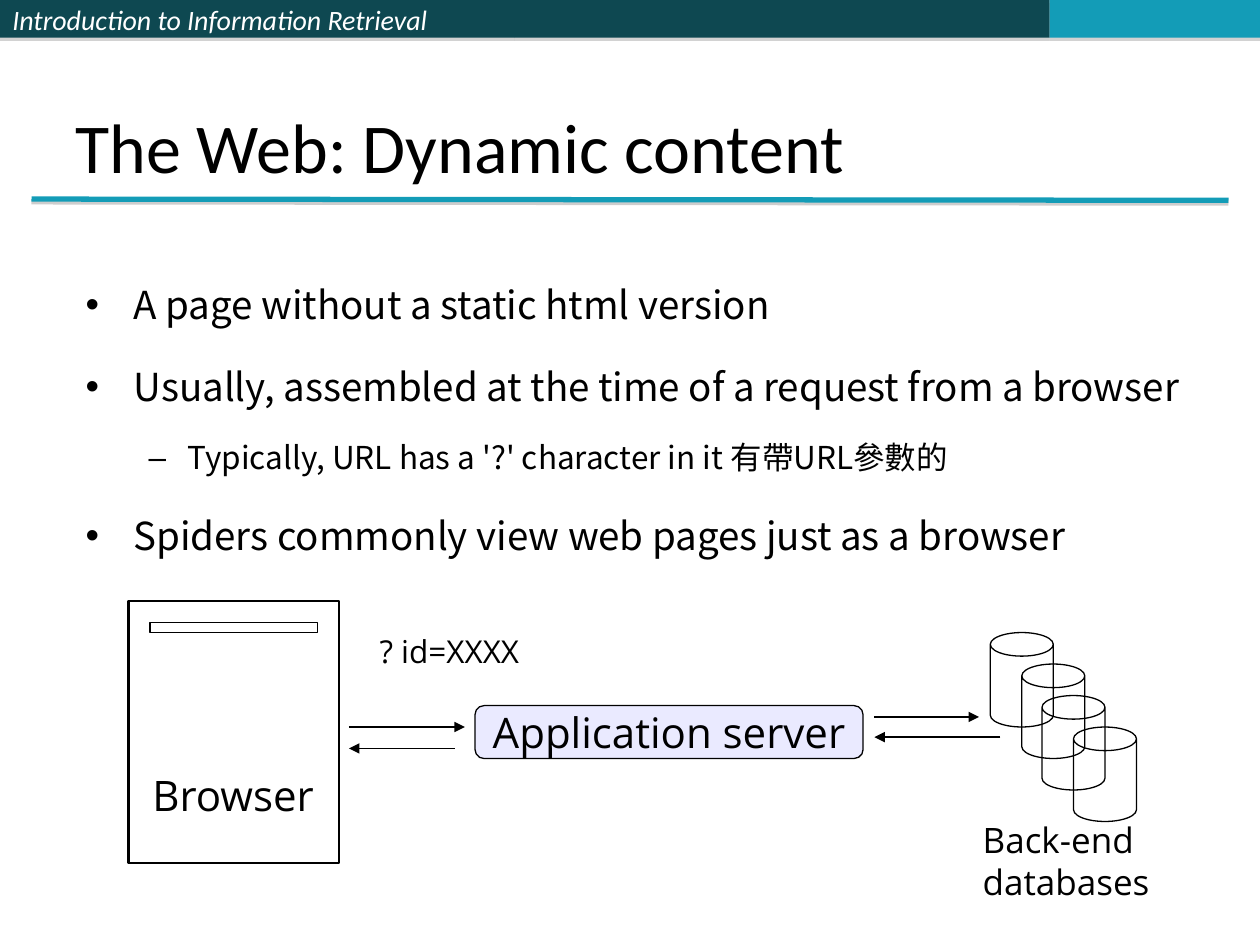
"""Build the slide on dynamic web content with its request diagram."""
from dataclasses import dataclass

from lxml.etree import SubElement
from pptx import Presentation
from pptx.dml.color import RGBColor
from pptx.enum.shapes import MSO_CONNECTOR, MSO_SHAPE
from pptx.enum.text import MSO_ANCHOR, MSO_AUTO_SIZE, PP_ALIGN
from pptx.oxml.ns import qn
from pptx.util import Inches, Pt


@dataclass(frozen=True)
class Theme:
    """Colours, fonts and type sizes."""
    dark: str = "0E4851"
    accent: str = "139CB7"
    server: str = "CCCCFF"
    shadow: str = "808080"
    ink: str = "000000"
    paper: str = "FFFFFF"
    heading_font: str = "Calibri"
    body_font: str = "Noto Sans CJK SC"
    label_font: str = "Open Sans"
    title_size: int = 40
    node_size: int = 24
    database_size: int = 20
    query_size: int = 18
    header_size: int = 16


THEME = Theme()
COURSE = "Introduction to Information Retrieval"
TITLE = "The Web: Dynamic content"
BULLETS = [
    (0, "A page without a static html version"),
    (0, "Usually, assembled at the time of a request from a browser"),
    (1, "Typically, URL has a '?' character in it 有帶URL參數的"),
    (0, "Spiders commonly view web pages just as a browser"),
]
LEVELS = [
    {"size": 22, "before": 7, "margin": 0.38, "indent": -0.38, "bullet": "•"},
    {"size": 18, "before": 6, "margin": 0.81, "indent": -0.31, "bullet": "–"},
]
HEADER = [(4.08, THEME.dark, COURSE), (4.25, THEME.dark, ""), (1.67, THEME.accent, "")]
HEADER_HEIGHT = 0.3
BROWSER_PARTS = [((1.02, 4.77, 1.67, 2.08), 1.5), ((1.19, 4.94, 1.33, 0.08), 0.75)]
SERVER = ("Application server", (3.77, 5.6, 3.08, 0.42))
LABELS = [
    ("Browser", (1.11, 6.06, 1.48, 0.5), THEME.node_size, PP_ALIGN.RIGHT),
    ("? id=XXXX", (2.79, 4.97, 1.43, 0.4), THEME.query_size, PP_ALIGN.RIGHT),
    ("Back-end\ndatabases", (7.7, 6.45, 1.55, 0.77), THEME.database_size, PP_ALIGN.LEFT),
]
DATABASE_LEFTS = [7.86, 8.11, 8.27, 8.52]
DATABASE_TOP, DATABASE_STEP = 5.02, 0.25
ARROWS = [(2.77, 3.69, 5.77), (3.61, 2.77, 5.94), (6.94, 7.77, 5.69), (7.94, 6.94, 5.85)]


def rgb(color):
    return RGBColor.from_string(color)


def inches(box):
    return [Inches(length) for length in box]


def style_text(paragraph, font, size, color=THEME.ink, italic=False):
    for run in paragraph.runs:
        run.font.name, run.font.size, run.font.italic = font, Pt(size), italic
        run.font.color.rgb = rgb(color)
        SubElement(run.font._element, qn("a:ea"), typeface=font)


def add_shadow(effects, opacity, distance):
    shadow = SubElement(effects, qn("a:outerShdw"), blurRad="0",
                        dist=str(Pt(distance)), dir="5400000", rotWithShape="0")
    color = SubElement(shadow, qn("a:srgbClr"), val=THEME.shadow)
    SubElement(color, qn("a:alpha"), val=str(opacity * 1000))


def add_box(slide, kind, box, fill=None, line=None):
    shape = slide.shapes.add_shape(kind, *inches(box))
    shape.shadow.inherit = False
    if fill:
        shape.fill.solid()
        shape.fill.fore_color.rgb = rgb(fill)
    else:
        shape.fill.background()
    if line:
        shape.line.color.rgb = rgb(THEME.ink)
        shape.line.width = Pt(line)
    else:
        shape.line.fill.background()
    return shape


def add_line(slide, start, end, color, width):
    line = slide.shapes.add_connector(MSO_CONNECTOR.STRAIGHT, *inches(start + end))
    line.line.color.rgb = rgb(color)
    line.line.width = Pt(width)
    effects = SubElement(line._element.spPr, qn("a:effectLst"))
    return line, effects


def add_header(slide):
    left = 0
    for width, color, text in HEADER:
        band = add_box(slide, MSO_SHAPE.RECTANGLE, (left, 0, width, HEADER_HEIGHT), color)
        add_shadow(band._element.spPr.find(qn("a:effectLst")), 35, 1.8)
        if text:
            frame = band.text_frame
            frame.text = text
            frame.vertical_anchor = MSO_ANCHOR.MIDDLE
            frame.paragraphs[0].alignment = PP_ALIGN.LEFT
            style_text(frame.paragraphs[0], THEME.heading_font, THEME.header_size,
                       THEME.paper, True)
        left += width
    _, effects = add_line(slide, (0.25, 1.58), (9.75, 1.59), THEME.accent, 3)
    add_shadow(effects, 38, 1.6)


def place(placeholder, box):
    placeholder.left, placeholder.top, placeholder.width, placeholder.height = inches(box)
    placeholder.text_frame.auto_size = MSO_AUTO_SIZE.NONE
    return placeholder.text_frame


def fill_title(slide):
    frame = place(slide.shapes.title, (0.5, 0.11, 8.99, 1.43))
    frame.text = TITLE
    frame.vertical_anchor = MSO_ANCHOR.BOTTOM
    frame.paragraphs[0].alignment = PP_ALIGN.LEFT
    style_text(frame.paragraphs[0], THEME.heading_font, THEME.title_size)


def fill_bullets(slide):
    frame = place(slide.placeholders[1], (0.58, 2, 9.14, 5.17))
    frame.text = "\n".join(text for _, text in BULLETS)
    for paragraph, (depth, _) in zip(frame.paragraphs, BULLETS):
        level = LEVELS[depth]
        paragraph.level = depth
        paragraph.line_spacing = 1.5
        paragraph.space_before = Pt(level["before"])
        style_text(paragraph, THEME.body_font, level["size"])
        properties = paragraph._p.get_or_add_pPr()
        properties.set("marL", str(Inches(level["margin"])))
        properties.set("indent", str(Inches(level["indent"])))
        bullet_color = SubElement(properties, qn("a:buClr"))
        SubElement(bullet_color, qn("a:srgbClr"), val=THEME.ink)
        SubElement(properties, qn("a:buChar"), char=level["bullet"])


def add_server(slide):
    text, box = SERVER
    server = add_box(slide, MSO_SHAPE.ROUNDED_RECTANGLE, box, THEME.server, 0.75)
    server.adjustments[0] = 0.17
    fill_color = server._element.spPr.find(qn("a:solidFill"))[0]
    SubElement(fill_color, qn("a:alpha"), val="40000")
    frame = server.text_frame
    frame.text = text
    frame.word_wrap = False
    frame.vertical_anchor = MSO_ANCHOR.MIDDLE
    frame.paragraphs[0].alignment = PP_ALIGN.CENTER
    style_text(frame.paragraphs[0], THEME.label_font, THEME.node_size)


def add_diagram(slide):
    add_server(slide)
    for box, width in BROWSER_PARTS:
        add_box(slide, MSO_SHAPE.RECTANGLE, box, line=width)
    for row, left in enumerate(DATABASE_LEFTS):
        top = DATABASE_TOP + row * DATABASE_STEP
        database = add_box(slide, MSO_SHAPE.CAN, (left, top, 0.5, 0.75), line=0.75)
        database.adjustments[0] = 0.375
    for text, box, size, alignment in LABELS:
        frame = slide.shapes.add_textbox(*inches(box)).text_frame
        frame.text = text
        frame.word_wrap = False
        frame.auto_size = MSO_AUTO_SIZE.SHAPE_TO_FIT_TEXT
        for paragraph in frame.paragraphs:
            paragraph.alignment = alignment
            style_text(paragraph, THEME.label_font, size)
    for start, end, y in ARROWS:
        arrow, _ = add_line(slide, (start, y), (end, y), THEME.ink, 0.75)
        SubElement(arrow.line._get_or_add_ln(), qn("a:tailEnd"), type="triangle")


def main():
    deck = Presentation()
    deck.slide_width, deck.slide_height = Inches(10), Inches(7.5)
    slide = deck.slides.add_slide(deck.slide_layouts[1])
    add_header(slide)
    fill_title(slide)
    fill_bullets(slide)
    add_diagram(slide)
    deck.save("out.pptx")


if __name__ == "__main__":
    main()
